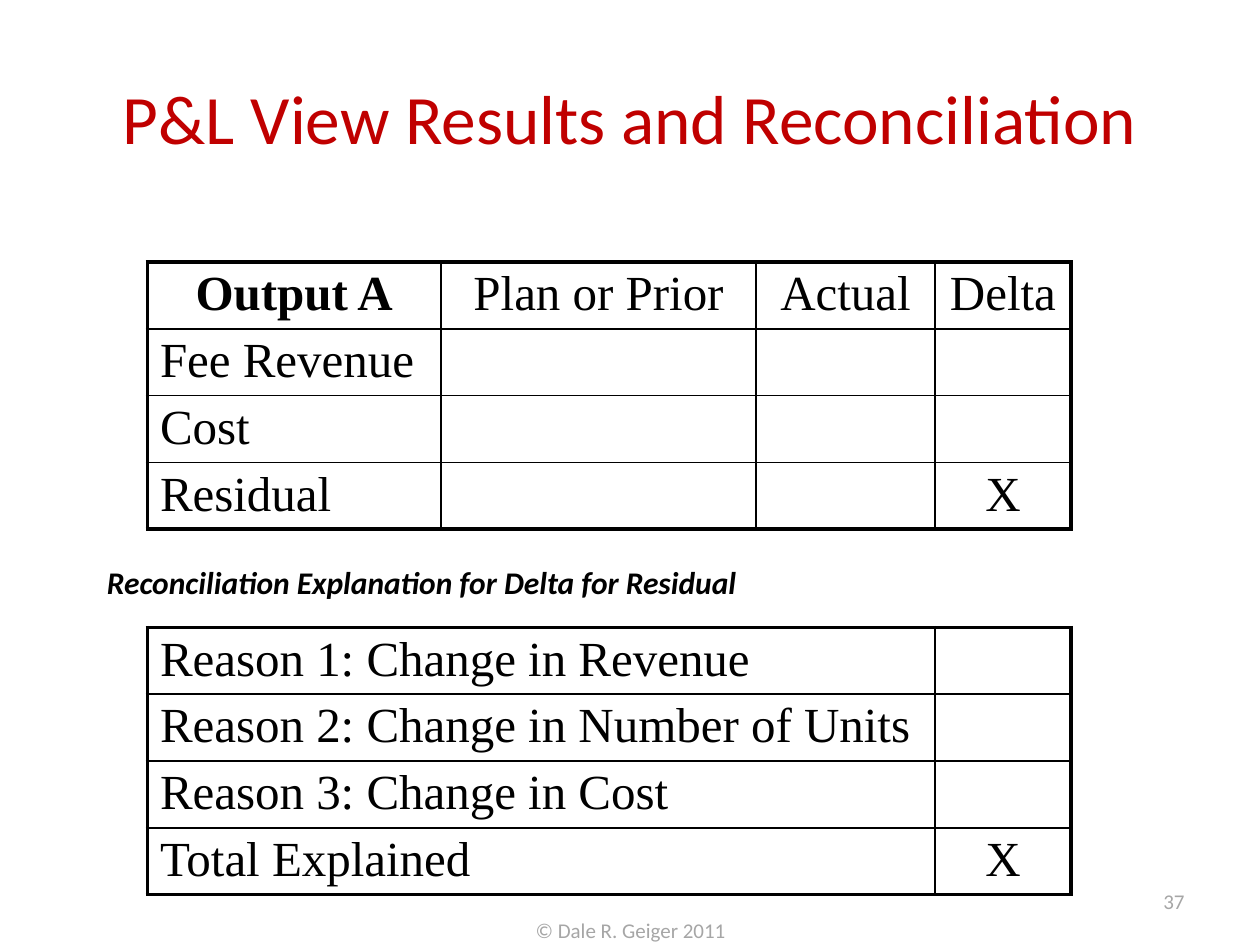
import dataclasses

import lxml.etree
import pptx
import pptx.dml.color
import pptx.enum.text
import pptx.oxml.ns
import pptx.util

Inches = pptx.util.Inches
Pt = pptx.util.Pt
Align = pptx.enum.text.PP_ALIGN
Anchor = pptx.enum.text.MSO_ANCHOR


@dataclasses.dataclass(frozen=True)
class Theme:
    """Colours, fonts and sizes of the slide."""
    red: str = "C00000"
    ink: str = "000000"
    gray: str = "A6A6A6"
    sans: str = "Calibri"
    serif: str = "Times New Roman"
    head: float = 39.6
    cell: float = 28
    note: float = 18
    foot: float = 12
    thick: float = 2.25
    thin: float = 1


THEME = Theme()


def style(para, face, size, color, align=Align.LEFT, bold=False, slant=False):
    """Format one paragraph."""
    para.alignment = align
    font = para.font
    font.name, font.size = face, Pt(size)
    font.bold, font.italic = bold, slant
    font.color.rgb = pptx.dml.color.RGBColor.from_string(color)


def edge(cell, side, width):
    """Draw one border of a cell."""
    tag = pptx.oxml.ns.qn
    props = cell._tc.get_or_add_tcPr()
    line = lxml.etree.SubElement(props, tag(f"a:ln{side}"), w=str(Pt(width)))
    fill = lxml.etree.SubElement(line, tag("a:solidFill"))
    lxml.etree.SubElement(fill, tag("a:srgbClr"), val=THEME.ink)


def add_title(slide, box, text):
    """Place the title."""
    shape = slide.shapes.title
    shape.left, shape.top, shape.width, shape.height = map(Inches, box)
    frame = shape.text_frame
    frame.text = text
    frame.vertical_anchor = Anchor.MIDDLE
    style(frame.paragraphs[0], THEME.sans, THEME.head, THEME.red, Align.CENTER)


def add_grid(slide, box, cols, rows, head=False):
    """Place a ruled table with a thick frame."""
    high, wide = len(rows), len(cols)
    table = slide.shapes.add_table(high, wide, *map(Inches, box)).table
    table.first_row = table.horz_banding = False
    for col, width in zip(table.columns, cols):
        col.width = Inches(width)
    for r, texts in enumerate(rows):
        table.rows[r].height = Inches(box[3] / high)
        for c, text in enumerate(texts):
            cell = table.cell(r, c)
            cell.margin_top = cell.margin_bottom = Inches(0.04)
            ends = {"L": c == 0, "R": c == wide - 1, "T": r == 0, "B": r == high - 1}
            for side, outer in ends.items():
                edge(cell, side, THEME.thick if outer else THEME.thin)
            cell.fill.background()
            if text:
                cell.text = text
                top = head and r == 0
                align = Align.CENTER if top or c else Align.LEFT
                style(cell.text_frame.paragraphs[0], THEME.serif, THEME.cell,
                      THEME.ink, align, bold=top and c == 0)


def add_note(slide, box, text, size, color, anchor=Anchor.MIDDLE, **look):
    """Place a line of text."""
    frame = slide.shapes.add_textbox(*map(Inches, box)).text_frame
    frame.word_wrap = True
    frame.vertical_anchor = anchor
    frame.text = text
    style(frame.paragraphs[0], THEME.sans, size, color, **look)


def main():
    """Build and save the slide."""
    deck = pptx.Presentation()
    deck.slide_width, deck.slide_height = Inches(10), Inches(7.5)
    slide = deck.slides.add_slide(deck.slide_layouts[5])
    add_title(slide, (0.5, 0.3, 9, 1.25), "P&L View Results and Reconciliation")
    add_grid(slide, (1.17, 2.08, 7.33, 2.12), (2.33, 2.5, 1.42, 1.08), [
        ("Output A", "Plan or Prior", "Actual", "Delta"),
        ("Fee Revenue", "", "", ""),
        ("Cost", "", "", ""),
        ("Residual", "", "", "X"),
    ], head=True)
    add_grid(slide, (1.17, 4.98, 7.33, 2.12), (6.25, 1.08), [
        ("Reason 1: Change in Revenue", ""),
        ("Reason 2: Change in Number of Units", ""),
        ("Reason 3: Change in Cost", ""),
        ("Total Explained", "X"),
    ])
    add_note(slide, (0.75, 4.42, 8, 0.5),
             "Reconciliation Explanation for Delta for Residual",
             THEME.note, THEME.ink, Anchor.TOP, bold=True, slant=True)
    add_note(slide, (3.42, 7.18, 3.17, 0.4), "© Dale R. Geiger 2011",
             THEME.foot, THEME.gray, align=Align.CENTER)
    add_note(slide, (7.17, 6.95, 2.33, 0.4), "37",
             THEME.foot, THEME.gray, align=Align.RIGHT)
    deck.save("out.pptx")


if __name__ == "__main__":
    main()
